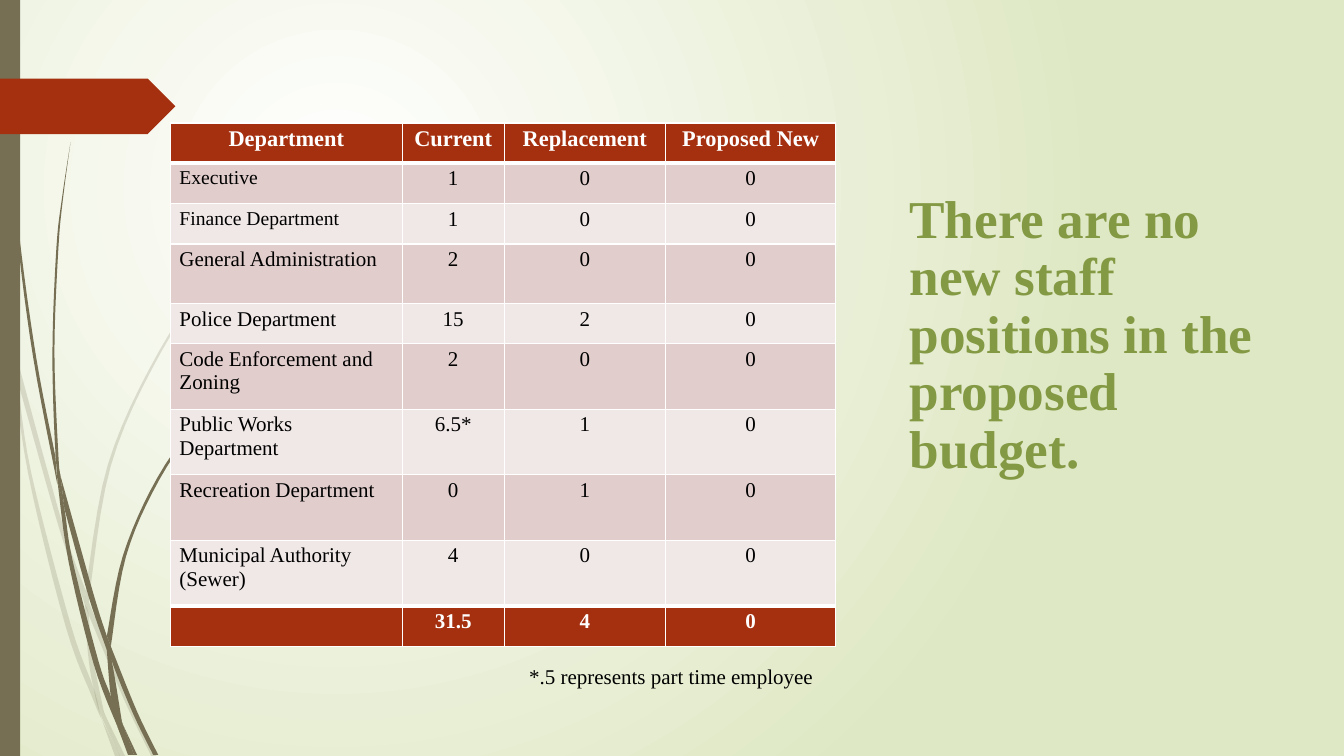
from lxml import etree
from pptx import Presentation
from pptx.dml.color import RGBColor
from pptx.enum import shapes, text
from pptx.oxml import ns
from pptx.util import Inches, Pt

FONT = "Times New Roman"
HUES = {"white": "FFFFFF", "sage": "DFE8C4", "olive": "766F54", "rust": "A53010",
        "green": "839943", "black": "000000", "rose": "E1CDCC", "blush": "F0E8E7"}
STAFF = [
    ("Department", "Current", "Replacement", "Proposed New"),
    ("Executive", "1", "0", "0"),
    ("Finance Department", "1", "0", "0"),
    ("General Administration", "2", "0", "0"),
    ("Police Department", "15", "2", "0"),
    ("Code Enforcement and Zoning", "2", "0", "0"),
    ("Public Works Department", "6.5*", "1", "0"),
    ("Recreation Department", "0", "1", "0"),
    ("Municipal Authority (Sewer)", "4", "0", "0"),
    ("", "31.5", "4", "0"),
]
COLS = [2.3, 1.01, 1.6, 1.69]
ROWS = [0.4, 0.4, 0.4, 0.59, 0.4, 0.65, 0.65, 0.65, 0.65, 0.4]
PALE = [
    ([(0.11, 3.5), (0.09, 3.22), (0, 2.82)], [(0, 2.99), (0.1, 3.44)]),
    ([(0.17, 3.76), (0.58, 5.22), (0.84, 5.99)], [(0.85, 5.86), (0.62, 5.2), (0.14, 3.45)]),
    ([(0.88, 6.1), (1.23, 6.94), (1.5, 7.5)],
     [(1.55, 7.5), (1.27, 6.92), (0.92, 6.07), (0.88, 5.96)]),
    ([(1.19, 7.5), (1.24, 7.5)], [(1.05, 7.11)]),
    ([(0.11, 3.5), (0.28, 4.7), (0.65, 6.21), (0.92, 6.93), (1.01, 7.14)],
     [(0.99, 7.07), (0.93, 6.83), (0.7, 6.19), (0.31, 4.69), (0.17, 3.76), (0.11, 3.5)]),
    ([(0.84, 5.99), (0.87, 6.46), (0.93, 6.83), (1.05, 7.11)],
     [(1.03, 7.06), (0.91, 6.46), (0.88, 6.1), (0.84, 5.99)]),
    ([(0.85, 5.86), (1.07, 4.61), (1.58, 3.48), (2.28, 2.44), (2.68, 1.97), (3.12, 1.53)],
     [(3.12, 1.54), (2.68, 1.98), (2.29, 2.45), (1.6, 3.49), (1.1, 4.62), (0.88, 5.96)]),
    ([(1.01, 7.14), (1.14, 7.5)], [(1.19, 7.5)]),
    ([(0.84, 5.99), (0.88, 6.1)], [(0.88, 5.96), (0.85, 5.86)]),
    ([(0.93, 6.83), (0.99, 7.07), (1.19, 7.5)], [(1.05, 7.11), (0.96, 6.92)]),
]
DARK = [
    ([(0.03, 0), (0.04, 0.48), (0.07, 1.1), (0.17, 2.33), (0.33, 3.55), (0.57, 4.81)],
     [(0.55, 4.53), (0.36, 3.55), (0.19, 2.32), (0.08, 1.09), (0.05, 0.48), (0.04, 0)]),
    ([(0.64, 5.05), (0.88, 5.92), (1.06, 6.45)], [(1.06, 6.31), (0.93, 5.9), (0.6, 4.72)]),
    ([(1.1, 6.41), (1.11, 6.56), (1.32, 7.08), (1.52, 7.49)],
     [(1.57, 7.49), (1.36, 7.06), (1.13, 6.49), (1.1, 6.41)]),
    ([(0.57, 4.77), (0.68, 5.57), (0.93, 6.59), (1.17, 7.22)],
     [(1.16, 7.17), (1.1, 6.91), (0.98, 6.57), (0.72, 5.56), (0.64, 5.05), (0.57, 4.77)]),
    ([(0.6, 4.72), (0.58, 4.53), (0.54, 3.49), (0.58, 2.45), (0.63, 1.93), (0.7, 1.41)],
     [(0.7, 1.41), (0.62, 1.93), (0.56, 2.45), (0.52, 3.49), (0.55, 4.49), (0.6, 4.72)]),
    ([(1.33, 7.49), (1.36, 7.49)], [(1.22, 7.19)]),
    ([(0.57, 4.77), (0.64, 5.05)], [(0.6, 4.72), (0.55, 4.49)]),
    ([(1.06, 6.31), (1.22, 5.51), (1.56, 4.74), (2.04, 4.05), (2.31, 3.73), (2.6, 3.44)],
     [(2.61, 3.44), (2.31, 3.74), (2.05, 4.06), (1.58, 4.76), (1.25, 5.52), (1.1, 6.41)]),
    ([(1.17, 7.22), (1.27, 7.49)], [(1.31, 7.49)]),
    ([(1.06, 6.45), (1.1, 6.91), (1.16, 7.06), (1.22, 7.19)],
     [(1.21, 7.16), (1.11, 6.56), (1.06, 6.45)]),
    ([(1.06, 6.45), (1.11, 6.56)], [(1.1, 6.41), (1.06, 6.31)]),
    ([(1.1, 6.91), (1.17, 7.22), (1.3, 7.49)], [(1.33, 7.49), (1.22, 7.19), (1.1, 6.91)]),
]


def tint(name):
    return RGBColor.from_string(HUES[name])


def write(frame, words, size=15, hue="black", bold=False, align=text.PP_ALIGN.LEFT):
    para = frame.paragraphs[0]
    para.alignment = align
    if words:
        run = para.add_run()
        run.text = words
        run.font.name, run.font.size, run.font.bold = FONT, Pt(size), bold
        run.font.color.rgb = tint(hue)
    return para


def paint(shape, hue, alpha=None):
    shape.shadow.inherit = False
    shape.fill.solid()
    shape.fill.fore_color.rgb = tint(hue)
    shape.line.fill.background()
    if alpha:
        clr = shape._element.spPr.find(".//" + ns.qn("a:srgbClr"))
        etree.SubElement(clr, ns.qn("a:alpha"), val=str(alpha * 1000))


def curve(edge, steps=6):
    if len(edge) < 3:
        return edge
    ends = [edge[0], *edge, edge[-1]]
    dots = []
    for a, b, c, d in zip(ends, ends[1:], ends[2:], ends[3:]):
        for n in range(steps):
            t = n / steps
            dots.append(tuple(
                q + t * (r - p) / 2 + t**2 * (2 * p - 5 * q + 4 * r - s) / 2
                + t**3 * (3 * q - p - 3 * r + s) / 2
                for p, q, r, s in zip(a, b, c, d)))
    return dots + [edge[-1]]


def grass(slide, left, top, blades, alpha=None):
    for blade in blades:
        dots = [(Inches(left + x), Inches(top + y)) for edge in blade for x, y in curve(edge)]
        form = slide.shapes.build_freeform(*dots[0])
        form.add_line_segments(dots[1:])
        paint(form.convert_to_shape(), "olive", alpha)


def backdrop(slide, left, top, high):
    fill = slide.background.fill
    fill.gradient()
    for stop, hue, spot in zip(fill.gradient_stops, ("white", "sage"), (0, 1)):
        stop.color.rgb, stop.position = tint(hue), spot
    grad = slide._element.find(".//" + ns.qn("a:gradFill"))
    line = grad.find(ns.qn("a:lin"))
    ring = etree.Element(ns.qn("a:path"), path="circle")
    etree.SubElement(ring, ns.qn("a:fillToRect"), l="50000", t="50000", r="100000", b="100000")
    grad.replace(line, ring)
    grass(slide, left, top, PALE, 20)
    grass(slide, left, top, DARK)
    bar = slide.shapes.add_shape(shapes.MSO_SHAPE.RECTANGLE, Inches(left), Inches(top),
                                 Inches(0.2), Inches(high))
    paint(bar, "olive")
    flag = slide.shapes.add_shape(shapes.MSO_SHAPE.PENTAGON, Inches(left), Inches(top + 0.78),
                                  Inches(1.74), Inches(0.55))
    paint(flag, "rust")


def heading(slide, left, top, wide, high):
    title = slide.shapes.title
    title.left, title.top, title.width, title.height = map(Inches, (left, top, wide, high))
    frame = title.text_frame
    frame.word_wrap, frame.auto_size = True, text.MSO_AUTO_SIZE.NONE
    frame.vertical_anchor = text.MSO_ANCHOR.BOTTOM
    para = write(frame, "There are no new staff positions in the proposed budget.",
                 size=38, hue="green", bold=True)
    para.line_spacing, para.space_after = 0.9, Pt(6)


def border(cell, top, bottom):
    props = cell._tc.get_or_add_tcPr()
    for side, width in zip("LRTB", (1, 1, top, bottom)):
        line = etree.SubElement(props, ns.qn("a:ln" + side), w=str(Pt(width)))
        fill = etree.SubElement(line, ns.qn("a:solidFill"))
        etree.SubElement(fill, ns.qn("a:srgbClr"), val=HUES["white"])


def roster(slide, left, top):
    table = slide.shapes.add_table(len(ROWS), len(COLS), Inches(left), Inches(top),
                                   Inches(sum(COLS)), Inches(sum(ROWS))).table
    table.horz_banding = False
    for col, wide in zip(table.columns, COLS):
        col.width = Inches(wide)
    last = len(ROWS) - 1
    for i, (row, high) in enumerate(zip(table.rows, ROWS)):
        row.height = Inches(high)
        strong = i in (0, last)
        hue = "rust" if strong else "rose" if i % 2 else "blush"
        for j, cell in enumerate(row.cells):
            border(cell, 3 if i in (1, last) else 1, 3 if i in (0, last - 1) else 1)
            cell.fill.solid()
            cell.fill.fore_color.rgb = tint(hue)
            cell.margin_left = cell.margin_right = Inches(0.09)
            cell.margin_top = cell.margin_bottom = Inches(0.04)
            size = 16 if i == 0 else 14 if j == 0 and i < 3 else 15
            align = text.PP_ALIGN.CENTER if strong or j else text.PP_ALIGN.LEFT
            write(cell.text_frame, STAFF[i][j], size=size, bold=strong, align=align,
                  hue="white" if strong else "black")


def note(slide, left, top, wide, high):
    box = slide.shapes.add_textbox(*map(Inches, (left, top, wide, high)))
    box.text_frame.word_wrap = False
    box.text_frame.auto_size = text.MSO_AUTO_SIZE.SHAPE_TO_FIT_TEXT
    write(box.text_frame, "*.5 represents part time employee")


def main():
    deck = Presentation()
    deck.slide_width, deck.slide_height = Inches(13.33), Inches(7.5)
    slide = deck.slides.add_slide(deck.slide_layouts[5])
    backdrop(slide, 0, 0, 7.5)
    heading(slide, 8.92, 1.22, 3.7, 3.59)
    roster(slide, 1.69, 1.22)
    note(slide, 5.15, 6.53, 3.03, 0.35)
    deck.save("out.pptx")


if __name__ == "__main__":
    main()
